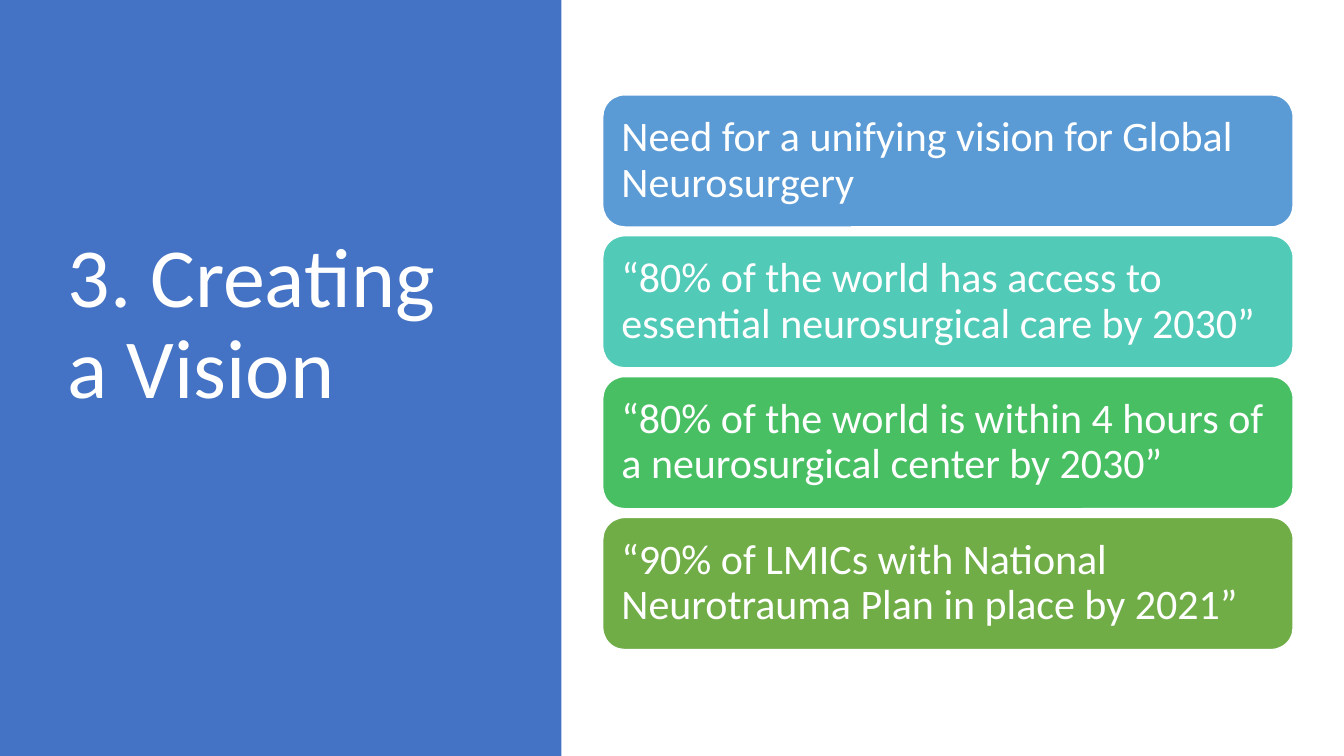
"""Build the "Creating a Vision" slide."""
from pptx import Presentation
from pptx.dml.color import RGBColor
from pptx.enum.shapes import MSO_SHAPE
from pptx.enum.text import MSO_ANCHOR, MSO_AUTO_SIZE, PP_ALIGN
from pptx.util import Cm, Pt

RECTANGLE = MSO_SHAPE.RECTANGLE
ROUNDED = MSO_SHAPE.ROUNDED_RECTANGLE
MIDDLE = MSO_ANCHOR.MIDDLE
NO_AUTOFIT = MSO_AUTO_SIZE.NONE
LEFT = PP_ALIGN.LEFT

FONT = "Calibri"
WHITE = RGBColor(0xFF, 0xFF, 0xFF)
BLUE = RGBColor(0x44, 0x72, 0xC4)
SKY = RGBColor(0x5B, 0x9B, 0xD5)
TEAL = RGBColor(0x52, 0xCA, 0xB8)
GREEN = RGBColor(0x49, 0xBF, 0x64)
OLIVE = RGBColor(0x70, 0xAD, 0x47)

GOALS = [
    ("Need for a unifying vision for Global Neurosurgery", SKY),
    ("“80% of the world has access to essential neurosurgical care by 2030”", TEAL),
    ("“80% of the world is within 4 hours of a neurosurgical center by 2030”", GREEN),
    ("“90% of LMICs with National Neurotrauma Plan in place by 2021”", OLIVE),
]
CARD_TOP = 2.39
CARD_PITCH = 3.55


def write(shape, text, size):
    """Put white, left-aligned, vertically centred text in a shape."""
    frame = shape.text_frame
    frame.text = text
    frame.word_wrap = True
    frame.auto_size = NO_AUTOFIT
    frame.vertical_anchor = MIDDLE
    paragraph = frame.paragraphs[0]
    paragraph.alignment = LEFT
    paragraph.line_spacing = 0.9
    font = paragraph.runs[0].font
    font.name = FONT
    font.size = Pt(size)
    font.color.rgb = WHITE


def add_panel(slide):
    """Add the coloured panel behind the title."""
    panel = slide.shapes.add_shape(RECTANGLE, 0, 0, Cm(14.15), Cm(19.05))
    panel.shadow.inherit = False
    panel.fill.solid()
    panel.fill.fore_color.rgb = BLUE
    panel.line.fill.background()
    slide.shapes.title.element.addprevious(panel.element)


def set_title(slide, text):
    """Place the title on the panel, a little above its middle."""
    title = slide.shapes.title
    title.left, title.top = Cm(1.45), Cm(1.73)
    title.width, title.height = Cm(10.57), Cm(15.29)
    write(title, text, 60)
    title.text_frame.margin_bottom = Cm(2.45)


def add_goal(slide, top, text, color):
    """Add one rounded goal card."""
    card = slide.shapes.add_shape(ROUNDED, Cm(15.19), top, Cm(17.4), Cm(3.33))
    card.shadow.inherit = False
    card.fill.solid()
    card.fill.fore_color.rgb = color
    card.line.color.rgb = WHITE
    card.line.width = Pt(1)
    write(card, text, 30)
    frame = card.text_frame
    frame.margin_left = frame.margin_right = Cm(0.31)
    frame.margin_top = frame.margin_bottom = Cm(0.31)


def main():
    """Build and save the slide."""
    deck = Presentation()
    deck.slide_width, deck.slide_height = Cm(33.87), Cm(19.05)
    slide = deck.slides.add_slide(deck.slide_layouts[5])
    add_panel(slide)
    set_title(slide, "3. Creating a Vision")
    for row, (text, color) in enumerate(GOALS):
        add_goal(slide, Cm(CARD_TOP + row * CARD_PITCH), text, color)
    deck.save("out.pptx")


if __name__ == "__main__":
    main()
